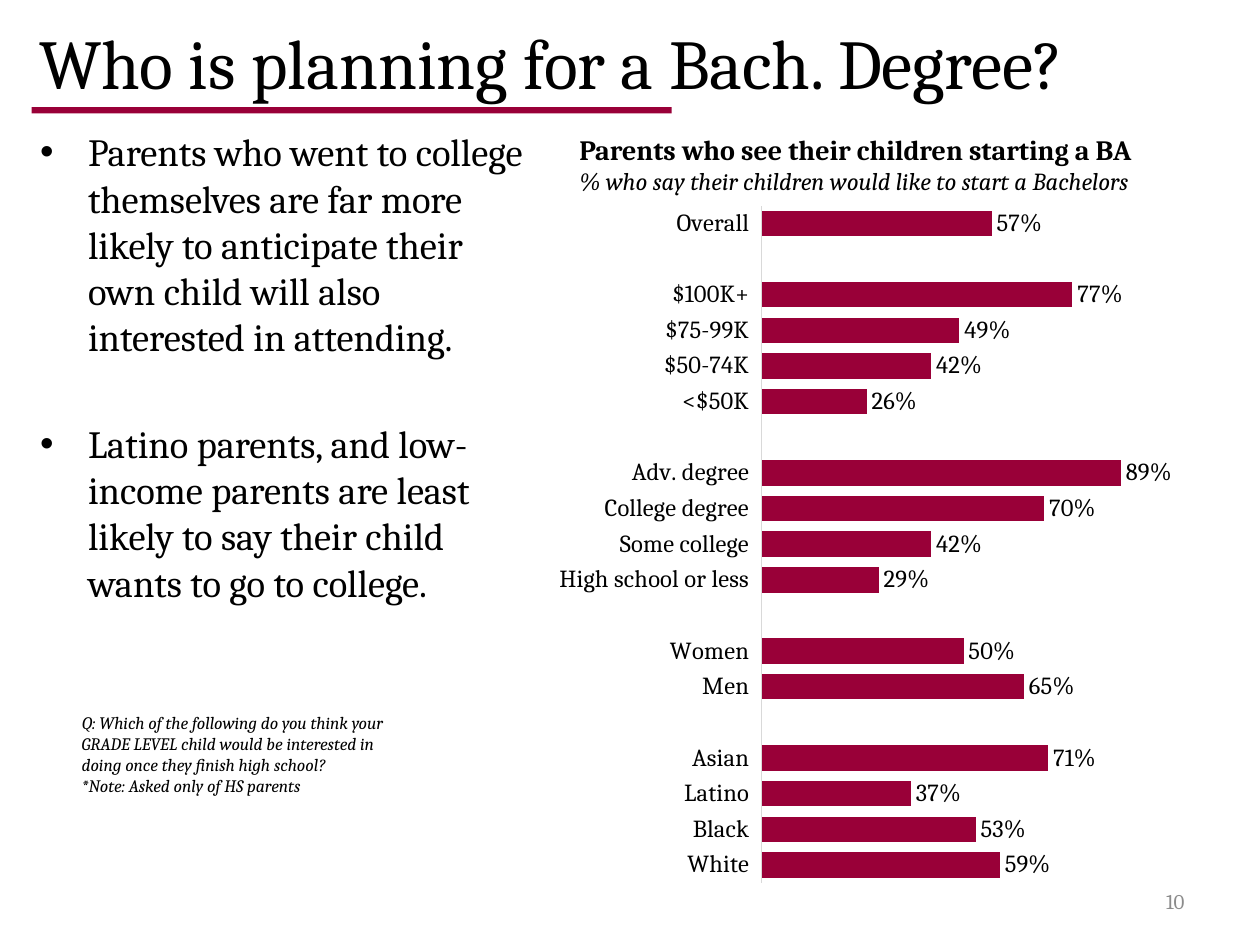
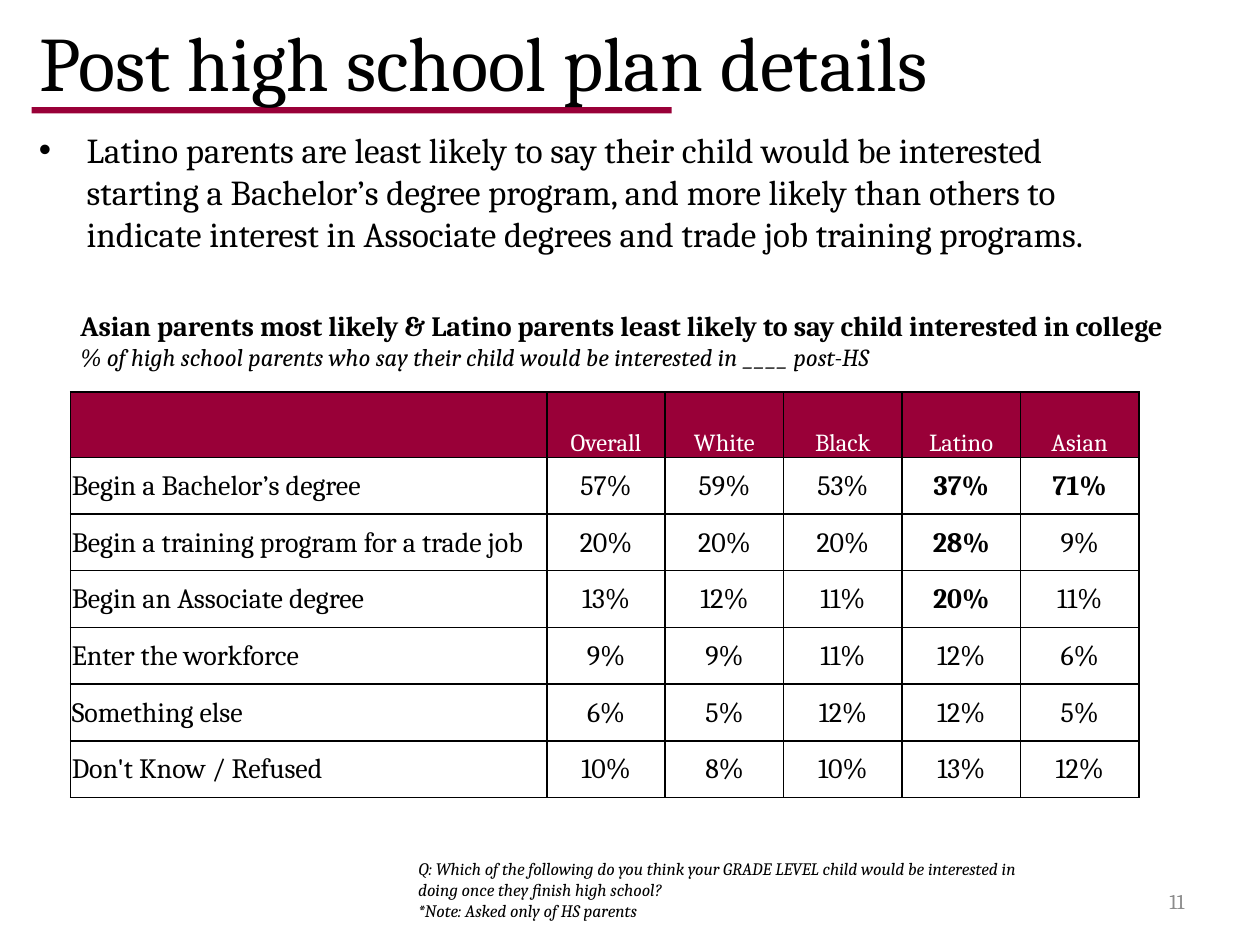
from lxml import etree
from pptx import Presentation
from pptx.chart.data import CategoryChartData
from pptx.dml.color import RGBColor
from pptx.enum.chart import XL_CHART_TYPE, XL_LABEL_POSITION, XL_TICK_LABEL_POSITION, XL_TICK_MARK
from pptx.enum.shapes import MSO_SHAPE
from pptx.enum.text import MSO_ANCHOR, MSO_AUTO_SIZE, PP_ALIGN
from pptx.oxml import parse_xml
from pptx.oxml.ns import nsdecls, qn
from pptx.util import Inches, Pt

CRIMSON = RGBColor(0x99, 0x00, 0x38)
BLACK = RGBColor(0x00, 0x00, 0x00)
WHITE = RGBColor(0xFF, 0xFF, 0xFF)
GRAY = RGBColor(0x8C, 0x8C, 0x8C)
AXIS_GRAY = RGBColor(0xD9, 0xD9, 0xD9)
FONT = "Cambria"

LEFT, CENTER, RIGHT = PP_ALIGN.LEFT, PP_ALIGN.CENTER, PP_ALIGN.RIGHT
TOP, MIDDLE, BOTTOM = MSO_ANCHOR.TOP, MSO_ANCHOR.MIDDLE, MSO_ANCHOR.BOTTOM
NO_AUTOFIT = MSO_AUTO_SIZE.NONE
RECTANGLE = MSO_SHAPE.RECTANGLE
BAR_CLUSTERED = XL_CHART_TYPE.BAR_CLUSTERED
OUTSIDE_END = XL_LABEL_POSITION.OUTSIDE_END
LABELS_LOW = XL_TICK_LABEL_POSITION.LOW
NO_TICKS = XL_TICK_MARK.NONE

PERCENT = "###0%"
TITLE_ONLY = 5

SURVEY_QUESTION = (
    "Q: Which of the following do you think your GRADE LEVEL child would be "
    "interested in doing once they finish high school?",
    "*Note: Asked only of HS parents",
)

# Bar groups from the bottom of the chart to the top
BACHELOR_GROUPS = [
    [("White", 0.59), ("Black", 0.53), ("Latino", 0.37), ("Asian", 0.71)],
    [("Men", 0.65), ("Women", 0.50)],
    [("High school or less", 0.29), ("Some college", 0.42),
     ("College degree", 0.70), ("Adv. degree", 0.89)],
    [("<$50K", 0.26), ("$50-74K", 0.42), ("$75-99K", 0.49), ("$100K+", 0.77)],
    [("Overall", 0.57)],
]

PLAN_HEADER = ["", "Overall", "White", "Black", "Latino", "Asian"]
PLAN_ROWS = [
    ("Begin a Bachelor’s degree", 57, 59, 53, 37, 71),
    ("Begin a training program for a trade job", 20, 20, 20, 28, 9),
    ("Begin an Associate degree", 13, 12, 11, 20, 11),
    ("Enter the workforce", 9, 9, 11, 12, 6),
    ("Something else", 6, 5, 12, 12, 5),
    ("Don't Know / Refused", 10, 8, 10, 13, 12),
]
HIGHLIGHTS = {(1, 4), (1, 5), (2, 4), (3, 4)}


def style_font(font, size, color=BLACK, bold=False, italic=False):
    font.name, font.size = FONT, Pt(size)
    font.bold, font.italic = bold, italic
    font.color.rgb = color


def style_paragraph(para, size, align=LEFT, **look):
    para.alignment = align
    for span in para.runs:
        style_font(span.font, size, **look)


class SurveyDeck:
    def __init__(self):
        self.deck = Presentation()
        self.deck.slide_width, self.deck.slide_height = Inches(10), Inches(7.5)
        self.page = None

    def add_page(self, title, size, width, number):
        self.page = self.deck.slides.add_slide(self.deck.slide_layouts[TITLE_ONLY])
        heading = self.page.shapes.title
        heading.left, heading.top = Inches(0.21), Inches(0)
        heading.width, heading.height = Inches(width), Inches(0.97)
        frame = heading.text_frame
        frame.text = title
        frame.auto_size = NO_AUTOFIT
        frame.vertical_anchor = MIDDLE
        style_paragraph(frame.paragraphs[0], size)
        self.add_title_rule()
        page_number = self.add_text(7.17, 6.95, 2.33, 0.4, [str(number)], MIDDLE)
        style_paragraph(page_number[0], 12, RIGHT, color=GRAY)

    def add_title_rule(self):
        rule = self.page.shapes.add_shape(
            RECTANGLE, Inches(0.25), Inches(0.85), Inches(5.08), Inches(0.05))
        rule.shadow.inherit = False
        rule.fill.solid()
        rule.fill.fore_color.rgb = CRIMSON
        rule.line.fill.background()
        # The rule lies behind the title
        self.page.shapes.title._element.addprevious(rule._element)

    def add_text(self, left, top, width, height, lines, anchor=TOP):
        box = self.page.shapes.add_textbox(
            Inches(left), Inches(top), Inches(width), Inches(height))
        frame = box.text_frame
        frame.word_wrap = True
        frame.vertical_anchor = anchor
        frame.text = "\n".join(lines)
        return frame.paragraphs

    def add_bullets(self, left, top, width, height, lines, size, gap=0):
        paragraphs = self.add_text(left, top, width, height, lines)
        for index, para in enumerate(paragraphs):
            properties = para._p.get_or_add_pPr()
            properties.set("marL", str(Inches(0.38)))
            properties.set("indent", str(-Inches(0.38)))
            etree.SubElement(properties, qn("a:buFont"), typeface="Arial")
            etree.SubElement(properties, qn("a:buChar"), char="•")
            if index:
                para.space_before = Pt(gap)
            style_paragraph(para, size)

    def add_caption(self, left, top, width, heading, subheading):
        first, second = self.add_text(left, top, width, 0.61, [heading, subheading])
        style_paragraph(first, 16, bold=True)
        style_paragraph(second, 14, italic=True)

    def add_question(self, left, top, width, height):
        for para in self.add_text(left, top, width, height, SURVEY_QUESTION):
            style_paragraph(para, 10, italic=True)

    def add_bar_chart(self, left, top, width, height, groups):
        data = CategoryChartData(number_format=PERCENT)
        bars = []
        for group in groups:
            # An empty category separates the groups
            bars += ([("", None)] if bars else []) + group
        data.categories = [name for name, share in bars]
        data.add_series("Series 1", [share for name, share in bars])
        chart = self.page.shapes.add_chart(
            BAR_CLUSTERED, Inches(left), Inches(top), Inches(width), Inches(height),
            data).chart
        chart.has_legend = chart.has_title = False
        style_font(chart.font, 14)

        categories, values = chart.category_axis, chart.value_axis
        categories.major_tick_mark = categories.minor_tick_mark = NO_TICKS
        categories.tick_label_position = LABELS_LOW
        categories.format.line.color.rgb = AXIS_GRAY
        categories.format.line.width = Pt(0.75)
        style_font(categories.tick_labels.font, 14)
        values.minimum_scale, values.maximum_scale = 0, 1
        values.has_major_gridlines = False
        values.visible = False

        plot = chart.plots[0]
        plot.gap_width = 40
        plot.vary_by_categories = False
        fill = plot.series[0].format.fill
        fill.solid()
        fill.fore_color.rgb = CRIMSON
        plot.has_data_labels = True
        labels = plot.data_labels
        labels.show_value = True
        labels.position = OUTSIDE_END
        labels.number_format, labels.number_format_is_linked = PERCENT, False
        style_font(labels.font, 14)
        self.place_plot(chart, x=0.34, y=0.025, w=0.6, h=0.95)

    def place_plot(self, chart, **place):
        area = chart._chartSpace.find(".//" + qn("c:plotArea"))
        for old in area.findall(qn("c:layout")):
            area.remove(old)
        settings = [("layoutTarget", "inner"), ("xMode", "edge"), ("yMode", "edge")]
        settings += place.items()
        body = "".join(f'<c:{name} val="{value}"/>' for name, value in settings)
        area.insert(0, parse_xml(
            f'<c:layout {nsdecls("c")}><c:manualLayout>{body}</c:manualLayout></c:layout>'))

    def add_table(self, left, top, widths, heights, rows, highlights):
        table = self.page.shapes.add_table(
            len(rows), len(widths), Inches(left), Inches(top),
            Inches(sum(widths)), Inches(sum(heights))).table
        for column, width in zip(table.columns, widths):
            column.width = Inches(width)
        for row, height in zip(table.rows, heights):
            row.height = Inches(height)
        for r, texts in enumerate(rows):
            for c, text in enumerate(texts):
                self.fill_cell(table.cell(r, c), text, r == 0, c == 0, (r, c) in highlights)

    def fill_cell(self, cell, text, is_header, is_label, bold):
        cell.text = text
        cell.margin_left = cell.margin_right = cell.margin_top = Inches(0.01)
        cell.margin_bottom = 0
        cell.vertical_anchor = BOTTOM if is_header else MIDDLE
        style_paragraph(cell.text_frame.paragraphs[0], 14 if is_header else 16,
                        LEFT if is_label else CENTER,
                        color=WHITE if is_header else BLACK, bold=bold)
        # Borders come before the fill in the cell properties
        properties = cell._tc.get_or_add_tcPr()
        for side in ("lnL", "lnR", "lnT", "lnB"):
            properties.append(parse_xml(
                f'<a:{side} {nsdecls("a")} w="{Pt(1)}"><a:solidFill>'
                f'<a:srgbClr val="{BLACK}"/></a:solidFill></a:{side}>'))
        if is_header:
            cell.fill.solid()
            cell.fill.fore_color.rgb = CRIMSON
        else:
            cell.fill.background()


def main():
    survey = SurveyDeck()

    # Bachelor's degree plans by group
    survey.add_page("Who is planning for a Bach. Degree?", 40, 9.57, 10)
    survey.add_bullets(0.22, 0.97, 4.09, 5.43, [
        "Parents who went to college themselves are far more likely to anticipate "
        "their own child will also interested in attending.",
        "Latino parents, and low-income parents are least likely to say their child "
        "wants to go to college.",
    ], size=22, gap=34.7)
    survey.add_question(0.55, 5.6, 2.73, 0.94)
    survey.add_caption(4.5, 1, 5.5, "Parents who see their children starting a BA",
                       "% who say their children would like to start a Bachelors")
    survey.add_bar_chart(4.23, 1.49, 5.34, 5.66, BACHELOR_GROUPS)

    # Plans after high school
    survey.add_page("Post high school plan details", 44, 9, 11)
    survey.add_bullets(0.21, 0.97, 9, 1.85, [
        "Latino parents are least likely to say their child would be interested "
        "starting a Bachelor’s degree program, and more likely than others to "
        "indicate interest in Associate degrees and trade job training programs.",
    ], size=20)
    survey.add_question(3.22, 6.76, 5.23, 0.77)
    plan_rows = [[label] + [f"{share}%" for share in shares] for label, *shares in PLAN_ROWS]
    survey.add_table(0.56, 3.11, [3.78] + [0.94] * 5, [0.52] + [0.45] * 6,
                     [PLAN_HEADER] + plan_rows, HIGHLIGHTS)
    survey.add_caption(
        0.54, 2.4, 9.26,
        "Asian parents most likely & Latino parents least likely to say child "
        "interested in college",
        "% of high school parents who say their child would be interested in ____ post-HS")

    survey.deck.save("out.pptx")


if __name__ == "__main__":
    main()
